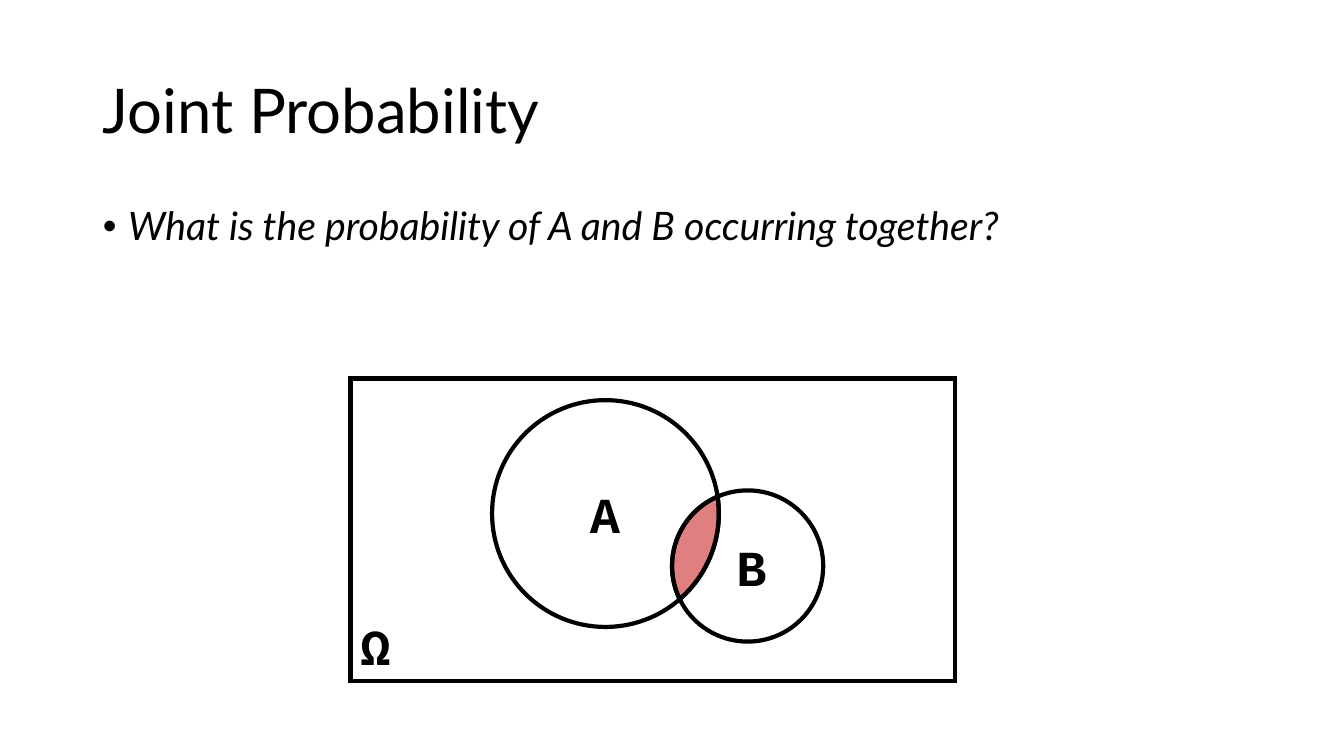
import dataclasses
import itertools
import math

import lxml.etree
import pptx
import pptx.dml.color
import pptx.enum.shapes
import pptx.enum.text
import pptx.oxml.ns
import pptx.util

BLACK = pptx.dml.color.RGBColor(0x00, 0x00, 0x00)
RED = pptx.dml.color.RGBColor(0xC0, 0x00, 0x00)
WIDE = pptx.util.Inches(13.33)
HIGH = pptx.util.Inches(7.5)
ALIGN = pptx.enum.text.PP_ALIGN
ANCHOR = pptx.enum.text.MSO_ANCHOR


# Lengths are percent shares of the slide's width or height
def across(share: float) -> int:
    return round(WIDE * share / 100)


def down(share: float) -> int:
    return round(HIGH * share / 100)


@dataclasses.dataclass
class Box:
    left: float
    top: float
    width: float
    height: float

    def place(self) -> tuple:
        return (across(self.left), down(self.top),
                across(self.width), down(self.height))


@dataclasses.dataclass
class Circle:
    x: int
    y: int
    r: int

    def point(self, turn: float, pull: float = 0) -> tuple:
        """Point on the rim, moved along its tangent by a share of r."""
        return (round(self.x + self.r * (math.cos(turn) - pull * math.sin(turn))),
                round(self.y + self.r * (math.sin(turn) + pull * math.cos(turn))))

    def arc(self, start: float, end: float) -> list:
        """Bezier curves from start to end, cut at the quarter turns."""
        low, high = sorted((start, end))
        quarter = math.pi / 2
        cuts = [quarter * i for i in range(math.ceil(low / quarter),
                                           math.ceil(high / quarter))]
        turns = sorted([low, *cuts, high], reverse=start > end)
        curves = []
        for t, u in itertools.pairwise(turns):
            pull = 4 / 3 * math.tan((u - t) / 4)
            curves.append((self.point(t, pull), self.point(u, -pull),
                           self.point(u)))
        return curves


@dataclasses.dataclass
class Part:
    curves: list
    label: str = ""
    shade: bool = False


def add_tag(parent, tag: str, **attrs: str):
    node = lxml.etree.SubElement(parent, pptx.oxml.ns.qn(tag))
    for key, value in attrs.items():
        node.set(key, value)
    return node


def write(shape, text: str, *, font: str = "Lato", size: float = 28,
          bold: bool = False, italic: bool = False, align=ALIGN.LEFT,
          anchor=ANCHOR.TOP, space: float = 1, before: float = 0):
    frame = shape.text_frame
    frame.word_wrap = True
    frame.vertical_anchor = anchor
    para = frame.paragraphs[0]
    para.alignment = align
    para.line_spacing = space
    para.space_before = pptx.util.Pt(before)
    run = para.add_run()
    run.text = text
    run.font.name = font
    run.font.size = pptx.util.Pt(size)
    run.font.bold = bold
    run.font.italic = italic
    run.font.color.rgb = BLACK
    return para


def label(shape, text: str, align, anchor) -> None:
    write(shape, text, font="Courier New", size=36, bold=True,
          align=align, anchor=anchor)


def outline(shape) -> None:
    shape.shadow.inherit = False
    shape.fill.background()
    shape.line.color.rgb = BLACK
    shape.line.width = pptx.util.Pt(3)
    add_tag(shape.line._get_or_add_ln(), "a:miter", lim="800000")


def bend(shape, curves: list) -> None:
    """Turn the straight sides of a freeform into Bezier curves."""
    sides = list(shape._element.iter(pptx.oxml.ns.qn("a:lnTo")))
    for side, curve in zip(sides, curves):
        node = add_tag(side.getparent(), "a:cubicBezTo")
        for x, y in curve:
            add_tag(node, "a:pt", x=str(x - shape.left), y=str(y - shape.top))
        side.getparent().replace(side, node)


def draw(slide, part: Part) -> None:
    ends = [curve[-1] for curve in part.curves]
    pen = slide.shapes.build_freeform(*ends[-1])
    pen.add_line_segments(ends, close=True)
    shape = pen.convert_to_shape()
    bend(shape, part.curves)
    outline(shape)
    if part.shade:
        shape.fill.solid()
        shape.fill.fore_color.rgb = RED
        tint = shape.fill._xPr.find(".//" + pptx.oxml.ns.qn("a:srgbClr"))
        add_tag(tint, "a:alpha", val="50000")
    if part.label:
        label(shape, part.label, ALIGN.CENTER, ANCHOR.MIDDLE)


def split(a: Circle, b: Circle) -> list[Part]:
    """Cut two crossing circles into their overlap and two crescents."""
    gap = math.hypot(b.x - a.x, b.y - a.y)
    aim = math.atan2(b.y - a.y, b.x - a.x)
    back = aim + math.pi
    half_a = math.acos((gap**2 + a.r**2 - b.r**2) / (2 * gap * a.r))
    half_b = math.acos((gap**2 + b.r**2 - a.r**2) / (2 * gap * b.r))
    full = 2 * math.pi
    rim_a = (aim - half_a, aim + half_a)
    rim_b = (back - half_b, back + half_b)
    outer_a = a.arc(rim_a[1], rim_a[0] + full)
    outer_b = b.arc(rim_b[1], rim_b[0] + full)
    return [Part(a.arc(*rim_a) + b.arc(*rim_b), shade=True),
            Part(outer_a + b.arc(*rim_b[::-1]), "A"),
            Part(outer_b + a.arc(*rim_a[::-1]), "B")]


def main() -> None:
    deck = pptx.Presentation()
    deck.slide_width, deck.slide_height = WIDE, HIGH
    slide = deck.slides.add_slide(deck.slide_layouts[1])

    # Title and question
    title, body = slide.placeholders
    spots = (Box(6.9, 5.33, 86.27, 19.33), Box(6.9, 26.67, 86.27, 63.47))
    for shape, spot in zip((title, body), spots):
        shape.left, shape.top, shape.width, shape.height = spot.place()
    write(title, "Joint Probability", size=44, anchor=ANCHOR.MIDDLE, space=0.9)
    para = write(body, "What is the probability of A and B occurring together?",
                 italic=True, space=0.9, before=10)
    props = para._p.get_or_add_pPr()
    indent = pptx.util.Inches(0.25)
    props.set("marL", str(indent))
    props.set("indent", str(-indent))
    add_tag(props, "a:buFont", typeface="Arial")
    add_tag(props, "a:buChar", char="•")

    # Sample space
    space = slide.shapes.add_shape(
        pptx.enum.shapes.MSO_SHAPE.RECTANGLE,
        *Box(26.08, 50.08, 45, 40).place())
    outline(space)
    label(space, "Ω", ALIGN.LEFT, ANCHOR.BOTTOM)

    # Events and their overlap
    a = Circle(across(45.05), down(67.93), down(15))
    b = Circle(across(55.63), down(74.87), down(10))
    for part in split(a, b):
        draw(slide, part)

    deck.save("out.pptx")


if __name__ == "__main__":
    main()
